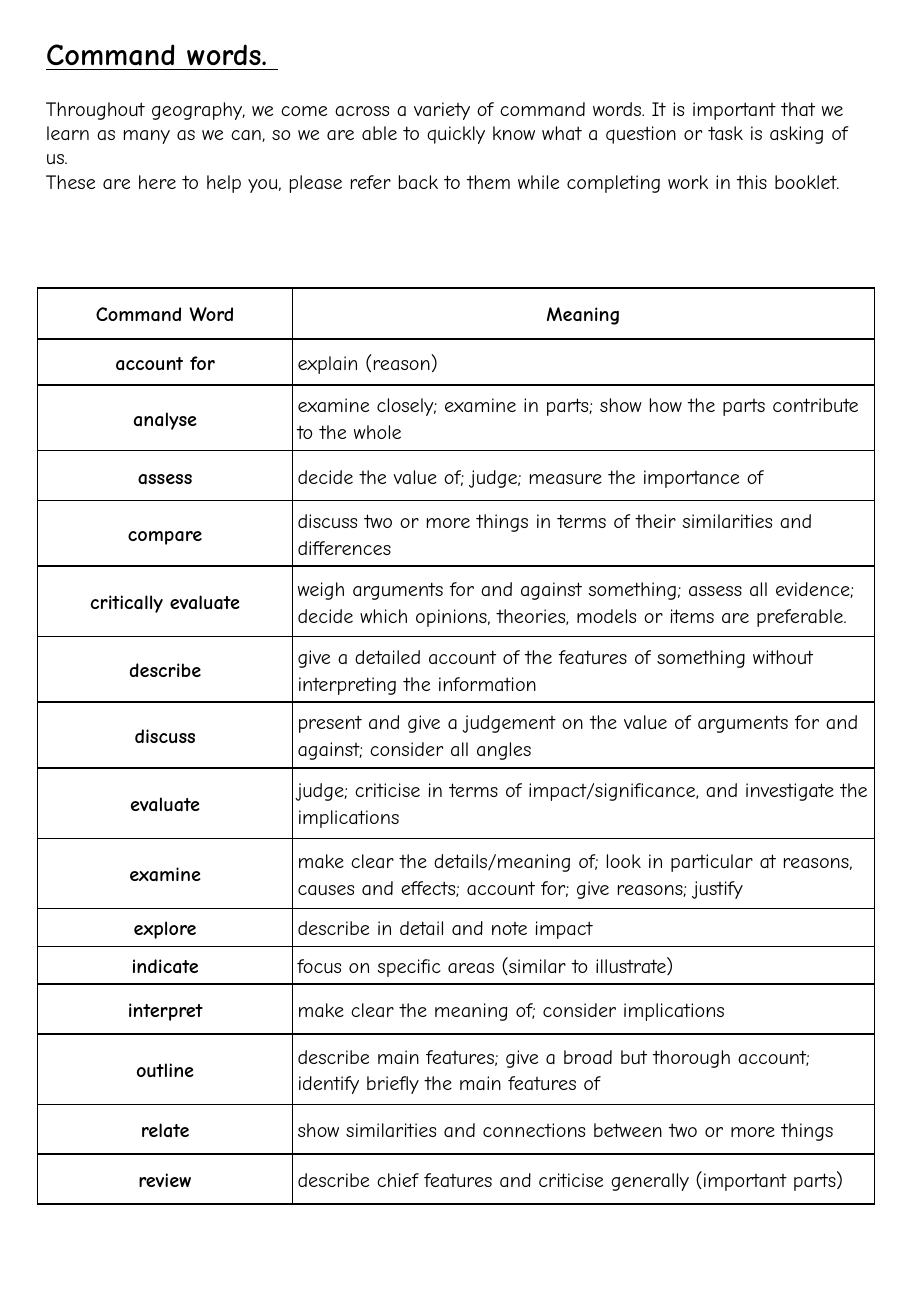
from lxml import etree
from pptx import Presentation
from pptx.dml.color import RGBColor
from pptx.enum.text import MSO_ANCHOR, MSO_AUTO_SIZE, PP_ALIGN
from pptx.oxml.ns import qn
from pptx.util import Inches, Pt

LEFT, CENTER = PP_ALIGN.LEFT, PP_ALIGN.CENTER
TOP, MIDDLE = MSO_ANCHOR.TOP, MSO_ANCHOR.MIDDLE
NO_AUTOFIT = MSO_AUTO_SIZE.NONE

FONT = "Comic Neue"
BLACK = "000000"
TITLE = "Command words. "
INTRODUCTION = [
    "Throughout geography, we come across a variety of command words. It is important that we learn as many as we can, so we are able to quickly know what a question or task is asking of us.",
    "These are here to help you, please refer back to them while completing work in this booklet.",
]
COMMAND_WORDS = [
    ("Command Word", "Meaning", 0.42),
    ("account for", "explain (reason)", 0.38),
    ("analyse", "examine closely; examine in parts; show how the parts contribute to the whole", 0.54),
    ("assess", "decide the value of; judge; measure the importance of", 0.41),
    ("compare", "discuss two or more things in terms of their similarities and differences", 0.54),
    ("critically evaluate", "weigh arguments for and against something; assess all evidence; decide which opinions, theories, models or items are preferable.", 0.58),
    ("describe", "give a detailed account of the features of something without interpreting the information", 0.54),
    ("discuss", "present and give a judgement on the value of arguments for and against; consider all angles", 0.54),
    ("evaluate", "judge; criticise in terms of impact/significance, and investigate the implications", 0.58),
    ("examine", "make clear the details/meaning of; look in particular at reasons, causes and effects; account for; give reasons; justify", 0.58),
    ("explore", "describe in detail and note impact", 0.31),
    ("indicate", "focus on specific areas (similar to illustrate)", 0.31),
    ("interpret", "make clear the meaning of; consider implications", 0.41),
    ("outline", "describe main features; give a broad but thorough account; identify briefly the main features of", 0.58),
    ("relate", "show similarities and connections between two or more things", 0.41),
    ("review", "describe chief features and criticise generally (important parts)", 0.41),
]
COLUMN_WIDTHS = (2.1, 4.79)
CONTENT_WIDTH = sum(COLUMN_WIDTHS)
TEXT_LEFT, TITLE_TOP, INTRODUCTION_TOP = 0.28, 0.24, 0.74
TABLE_LEFT, TABLE_TOP = 0.31, 2.37
CELL_MARGIN = 0.04


def color(value):
    return RGBColor.from_string(value)


def format_paragraph(paragraph, size, bold, align=LEFT):
    paragraph.alignment = align
    font = paragraph.font
    font.name, font.size, font.bold = FONT, Pt(size), bold
    font.color.rgb = color(BLACK)


def add_borders(cell, width=1):
    properties = cell._tc.get_or_add_tcPr()
    for index, side in enumerate(("lnL", "lnR", "lnT", "lnB")):
        line = etree.Element(qn(f"a:{side}"), w=str(Pt(width)))
        fill = etree.SubElement(line, qn("a:solidFill"))
        etree.SubElement(fill, qn("a:srgbClr"), val=BLACK)
        properties.insert(index, line)


def add_title(slide):
    title = slide.shapes.title
    title.left, title.top = Inches(TEXT_LEFT), Inches(TITLE_TOP)
    title.width, title.height = Inches(CONTENT_WIDTH), Inches(0.4)
    frame = title.text_frame
    frame.text = TITLE
    frame.auto_size, frame.vertical_anchor = NO_AUTOFIT, TOP
    format_paragraph(frame.paragraphs[0], 18, True)
    frame.paragraphs[0].font.underline = True


def add_introduction(slide):
    box = slide.shapes.add_textbox(Inches(TEXT_LEFT), Inches(INTRODUCTION_TOP),
                                   Inches(CONTENT_WIDTH), Inches(0.9))
    frame = box.text_frame
    frame.word_wrap = True
    frame.text = "\n".join(INTRODUCTION)
    for paragraph in frame.paragraphs:
        format_paragraph(paragraph, 12, False)


def fill_cell(cell, text, bold, align):
    cell.text = text
    cell.vertical_anchor = MIDDLE
    cell.margin_left = cell.margin_right = Inches(CELL_MARGIN)
    cell.margin_top = cell.margin_bottom = Inches(CELL_MARGIN)
    cell.fill.background()
    paragraph = cell.text_frame.paragraphs[0]
    paragraph.line_spacing, paragraph.space_after = 1.15, Pt(10)
    format_paragraph(paragraph, 12, bold, align)
    add_borders(cell)


def add_command_table(slide):
    height = sum(row[-1] for row in COMMAND_WORDS)
    table = slide.shapes.add_table(
        len(COMMAND_WORDS), len(COLUMN_WIDTHS), Inches(TABLE_LEFT), Inches(TABLE_TOP),
        Inches(CONTENT_WIDTH), Inches(height)).table
    table.first_row = table.horz_banding = False
    for column, width in zip(table.columns, COLUMN_WIDTHS):
        column.width = Inches(width)
    for index, (word, meaning, row_height) in enumerate(COMMAND_WORDS):
        table.rows[index].height = Inches(row_height)
        is_header = index == 0
        fill_cell(table.cell(index, 0), word, True, CENTER)
        fill_cell(table.cell(index, 1), meaning, is_header, CENTER if is_header else LEFT)


def main():
    presentation = Presentation()
    presentation.slide_width, presentation.slide_height = Inches(7.5), Inches(10.83)
    slide = presentation.slides.add_slide(presentation.slide_layouts[5])
    add_title(slide)
    add_introduction(slide)
    add_command_table(slide)
    presentation.save("out.pptx")


if __name__ == "__main__":
    main()
